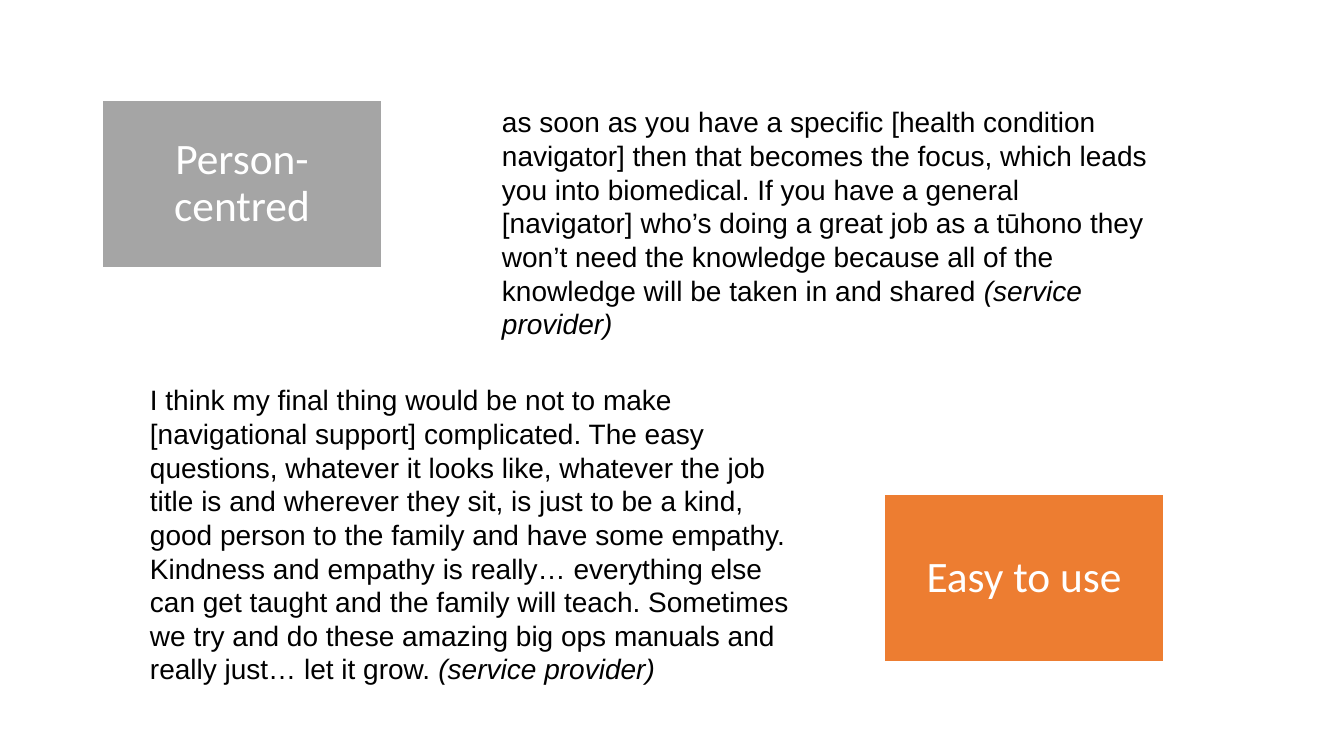
from dataclasses import dataclass

from pptx import Presentation
from pptx.dml.color import RGBColor as RGB
from pptx.enum.shapes import MSO_SHAPE as SHAPE
from pptx.enum.text import MSO_ANCHOR as ANCHOR, MSO_AUTO_SIZE as AUTO, PP_ALIGN as ALIGN
from pptx.util import Pt

SOURCE = "(service provider)"
QUOTES = [
    {
        "at": (492, 100, 672, 248),
        "text": "as soon as you have a specific [health condition navigator] then that "
                "becomes the focus, which leads you into biomedical. If you have a general "
                "[navigator] who’s doing a great job as a tūhono they won’t need the "
                "knowledge because all of the knowledge will be taken in and shared ",
    },
    {
        "at": (140, 378, 672, 316),
        "text": "I think my final thing would be not to make [navigational support] "
                "complicated. The easy questions, whatever it looks like, whatever the job "
                "title is and wherever they sit, is just to be a kind, good person to the "
                "family and have some empathy. Kindness and empathy is really… everything "
                "else can get taught and the family will teach. Sometimes we try and do "
                "these amazing big ops manuals and really just… let it grow. ",
    },
]
LABELS = [
    {"at": (102, 100), "text": "Person-centred", "fill": "grey"},
    {"at": (884, 494), "text": "Easy to use", "fill": "orange"},
]
LABEL_SIZE = (280, 168)
LABEL_PAD = 13
SLIDE = (1344, 756)


@dataclass(frozen=True)
class Theme:
    grey: str = "A5A5A5"
    orange: str = "ED7D31"
    white: str = "FFFFFF"
    black: str = "000000"
    quote: int = 20
    label: int = 31


THEME = Theme()


def px(size):
    return round(size * 914400 / 100.8)


def write(frame, runs, font, size, color, align=ALIGN.LEFT, anchor=ANCHOR.TOP, lead=1.0):
    frame.word_wrap = True
    frame.vertical_anchor = anchor
    para = frame.paragraphs[0]
    para.alignment = align
    para.line_spacing = lead
    for text, slant in runs:
        run = para.add_run()
        run.text = text
        run.font.name = font
        run.font.size = Pt(size)
        run.font.italic = slant
        run.font.color.rgb = RGB.from_string(color)


def add_quote(slide, quote):
    box = slide.shapes.add_textbox(*map(px, quote["at"]))
    write(box.text_frame, [(quote["text"], False), (SOURCE, True)],
          font="Arial", size=THEME.quote, color=THEME.black)
    box.text_frame.auto_size = AUTO.SHAPE_TO_FIT_TEXT


def add_label(slide, label):
    box = slide.shapes.add_shape(SHAPE.RECTANGLE, *map(px, label["at"] + LABEL_SIZE))
    box.shadow.inherit = False
    box.fill.solid()
    box.fill.fore_color.rgb = RGB.from_string(getattr(THEME, label["fill"]))
    box.line.color.rgb = RGB.from_string(THEME.white)
    box.line.width = Pt(1)
    frame = box.text_frame
    frame.margin_left = frame.margin_right = px(LABEL_PAD)
    frame.margin_top = frame.margin_bottom = px(LABEL_PAD)
    write(frame, [(label["text"], False)], font="Calibri", size=THEME.label,
          color=THEME.white, align=ALIGN.CENTER, anchor=ANCHOR.MIDDLE, lead=0.9)


def main():
    deck = Presentation()
    deck.slide_width, deck.slide_height = map(px, SLIDE)
    slide = deck.slides.add_slide(deck.slide_layouts[6])
    for quote in QUOTES:
        add_quote(slide, quote)
    for label in LABELS:
        add_label(slide, label)
    deck.save("out.pptx")


if __name__ == "__main__":
    main()
